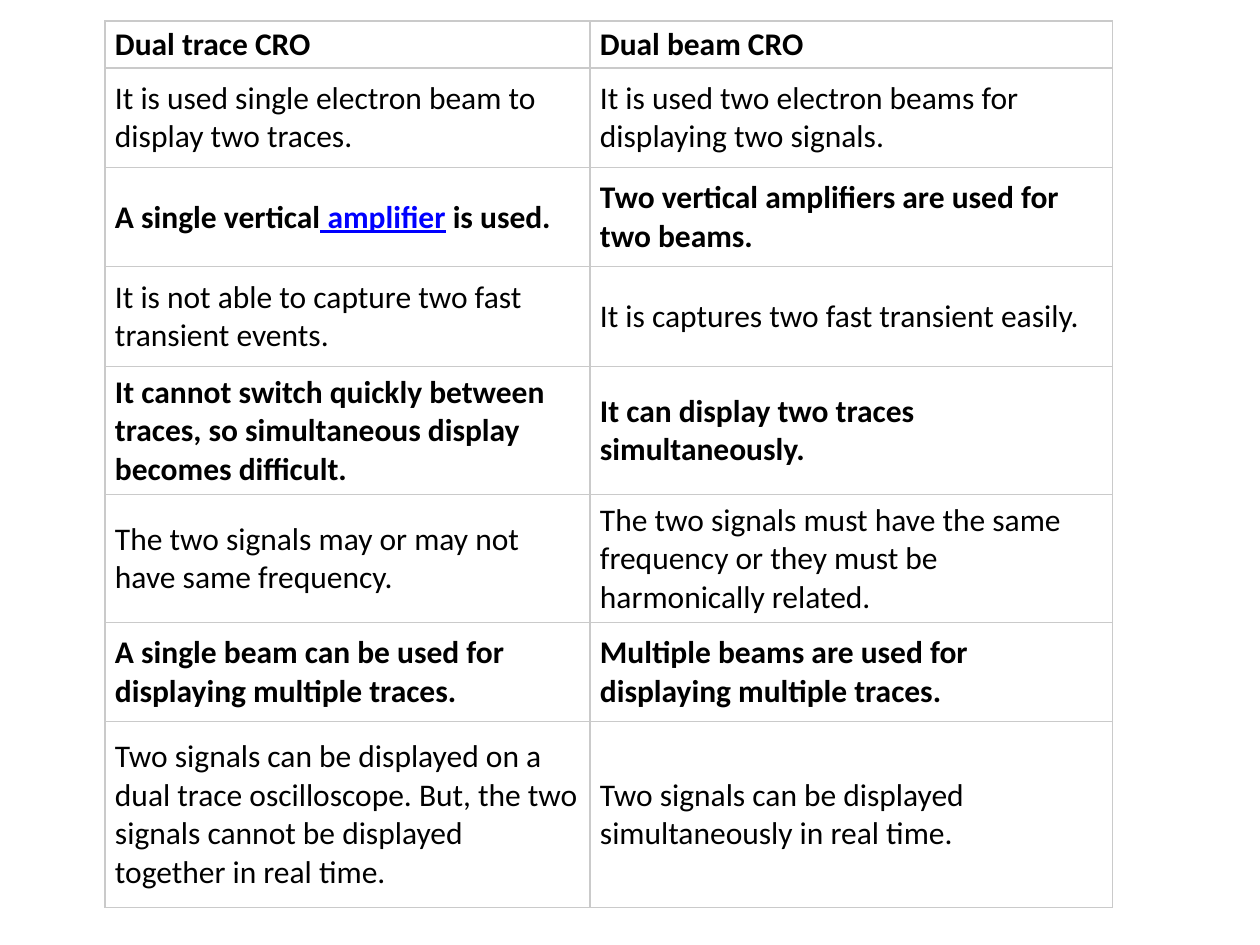
"""Build a slide comparing dual trace and dual beam oscilloscopes in a table."""
from lxml import etree
from pptx import Presentation
from pptx.dml.color import RGBColor
from pptx.enum.text import MSO_ANCHOR
from pptx.oxml.ns import qn
from pptx.util import Pt

MIDDLE = MSO_ANCHOR.MIDDLE
PX = 7257
FONT, SIZE = "Calibri", 18
BLACK, WHITE, LINK, RULE = "000000", "FFFFFF", "0000FF", "CACACA"
LINK_TEXT = " amplifier"

ROWS = [
    ("Dual trace CRO", "Dual beam CRO"),
    ("It is used single electron beam to display two traces.",
     "It is used two electron beams for displaying two signals."),
    (("A single vertical", LINK_TEXT, " is used."),
     "Two vertical amplifiers are used for two beams."),
    ("It is not able to capture two fast transient events.",
     "It is captures two fast transient easily."),
    ("It cannot switch quickly between traces, so simultaneous display becomes difficult.",
     "It can display two traces simultaneously."),
    ("The two signals may or may not have same frequency.",
     "The two signals must have the same frequency or they must be harmonically related."),
    ("A single beam can be used for displaying multiple traces.",
     "Multiple beams are used for displaying multiple traces."),
    ("Two signals can be displayed on a dual trace oscilloscope. But, the two signals "
     "cannot be displayed together in real time.",
     "Two signals can be displayed simultaneously in real time."),
]
LEFT, TOP = 105, 21
COLUMN_WIDTHS = [485, 523]
ROW_HEIGHTS = [47, 100, 99, 100, 128, 128, 99, 186]
INSET_X, INSET_Y = 10, 4


def px(length):
    return length * PX


def color(code):
    return RGBColor.from_string(code)


def add_borders(cell):
    properties = cell._tc.get_or_add_tcPr()
    for index, side in enumerate(("a:lnL", "a:lnR", "a:lnT", "a:lnB")):
        line = etree.Element(qn(side), w=str(Pt(0.75)))
        fill = etree.SubElement(line, qn("a:solidFill"))
        etree.SubElement(fill, qn("a:srgbClr"), val=RULE)
        properties.insert(index, line)


def fill_cell(cell, content, bold):
    cell.fill.solid()
    cell.fill.fore_color.rgb = color(WHITE)
    cell.vertical_anchor = MIDDLE
    cell.margin_left = cell.margin_right = px(INSET_X)
    cell.margin_top = cell.margin_bottom = px(INSET_Y)
    para = cell.text_frame.paragraphs[0]
    for text in (content,) if isinstance(content, str) else content:
        span = para.add_run()
        span.text = text
        linked = text == LINK_TEXT
        span.font.name = FONT
        span.font.size = Pt(SIZE)
        span.font.bold = bold
        span.font.underline = linked
        span.font.color.rgb = color(LINK if linked else BLACK)
    add_borders(cell)


def main():
    deck = Presentation()
    deck.slide_width, deck.slide_height = px(1260), px(945)
    page = deck.slides.add_slide(deck.slide_layouts[6])
    table = page.shapes.add_table(
        len(ROWS), len(COLUMN_WIDTHS), px(LEFT), px(TOP),
        px(sum(COLUMN_WIDTHS)), px(sum(ROW_HEIGHTS))).table
    table.horz_banding = False
    for column, width in zip(table.columns, COLUMN_WIDTHS):
        column.width = px(width)
    for number, (row, height, contents) in enumerate(zip(table.rows, ROW_HEIGHTS, ROWS)):
        row.height = px(height)
        for cell, content in zip(row.cells, contents):
            fill_cell(cell, content, number % 2 == 0)
    deck.save("out.pptx")


if __name__ == "__main__":
    main()
